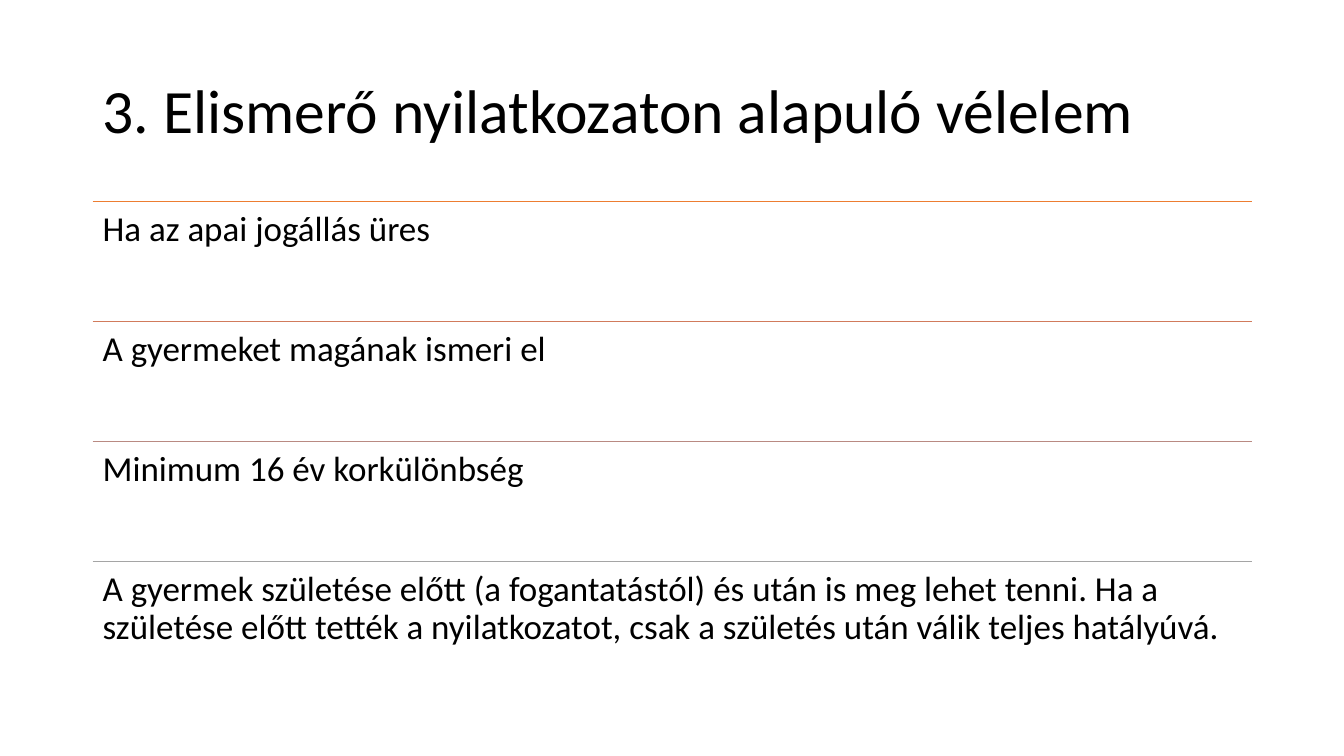
from dataclasses import dataclass

from lxml.etree import SubElement
from pptx import Presentation
from pptx.dml.color import RGBColor
from pptx.enum.shapes import MSO_CONNECTOR as Connector
from pptx.enum.text import MSO_ANCHOR as Anchor
from pptx.oxml.ns import qn
from pptx.slide import Slide
from pptx.util import Inches, Pt


@dataclass(frozen=True)
class Theme:
    font: str = "Calibri"
    text: str = "000000"
    background: str = "FFFFFF"
    title_size: float = 44
    body_size: float = 25
    line_spacing: float = 0.9
    space_after: float = 0.35  # share of the type size
    rule_width: float = 1


@dataclass(frozen=True)
class Grid:
    left: float = 0.92
    width: float = 11.5
    title_top: float = 0.4
    title_height: float = 1.45
    rows_top: float = 2
    row_height: float = 1.19

    def row_top(self, row: int) -> float:
        return self.rows_top + row * self.row_height


@dataclass(frozen=True)
class Condition:
    text: str
    rule_color: str


THEME = Theme()
GRID = Grid()
TITLE = "3. Elismerő nyilatkozaton alapuló vélelem"
CONDITIONS = [
    Condition("Ha az apai jogállás üres", "ED7D31"),
    Condition("A gyermeket magának ismeri el", "D17B5C"),
    Condition("Minimum 16 év korkülönbség", "B98A82"),
    Condition(
        "A gyermek születése előtt (a fogantatástól) és után is meg lehet tenni. "
        "Ha a születése előtt tették a nyilatkozatot, csak a születés után válik "
        "teljes hatályúvá.",
        "A5A5A5",
    ),
]


def add_text(slide: Slide, text: str, top: float, height: float, size: float,
             anchor: Anchor, inset: float, space_after: float = 0) -> None:
    """Add a full-width text box; inset is the top and bottom margin in inches."""
    box = slide.shapes.add_textbox(
        Inches(GRID.left), Inches(top), Inches(GRID.width), Inches(height))
    frame = box.text_frame
    frame.word_wrap = True
    frame.vertical_anchor = anchor
    frame.margin_left = frame.margin_right = Inches(0.1)
    frame.margin_top = frame.margin_bottom = Inches(inset)
    paragraph = frame.paragraphs[0]
    paragraph.text = text
    paragraph.line_spacing = THEME.line_spacing
    paragraph.space_after = Pt(space_after)
    paragraph.font.name = THEME.font
    paragraph.font.size = Pt(size)
    paragraph.font.color.rgb = RGBColor.from_string(THEME.text)


def add_rule(slide: Slide, top: float, color: str) -> None:
    rule = slide.shapes.add_connector(
        Connector.STRAIGHT, Inches(GRID.left), Inches(top),
        Inches(GRID.left + GRID.width), Inches(top))
    rule.line.color.rgb = RGBColor.from_string(color)
    rule.line.width = Pt(THEME.rule_width)
    SubElement(rule._element.spPr, qn("a:effectLst"))


def add_condition(slide: Slide, row: int, condition: Condition) -> None:
    top = GRID.row_top(row)
    add_rule(slide, top, condition.rule_color)
    add_text(slide, condition.text, top, GRID.row_height, THEME.body_size,
             Anchor.TOP, 0.1, THEME.body_size * THEME.space_after)


def main() -> None:
    presentation = Presentation()
    presentation.slide_width = Inches(13.33)
    presentation.slide_height = Inches(7.5)
    slide = presentation.slides.add_slide(presentation.slide_layouts[6])
    slide.background.fill.solid()
    slide.background.fill.fore_color.rgb = RGBColor.from_string(THEME.background)
    add_text(slide, TITLE, GRID.title_top, GRID.title_height, THEME.title_size,
             Anchor.MIDDLE, 0.05)
    for row, condition in enumerate(CONDITIONS):
        add_condition(slide, row, condition)
    presentation.save("out.pptx")


if __name__ == "__main__":
    main()
